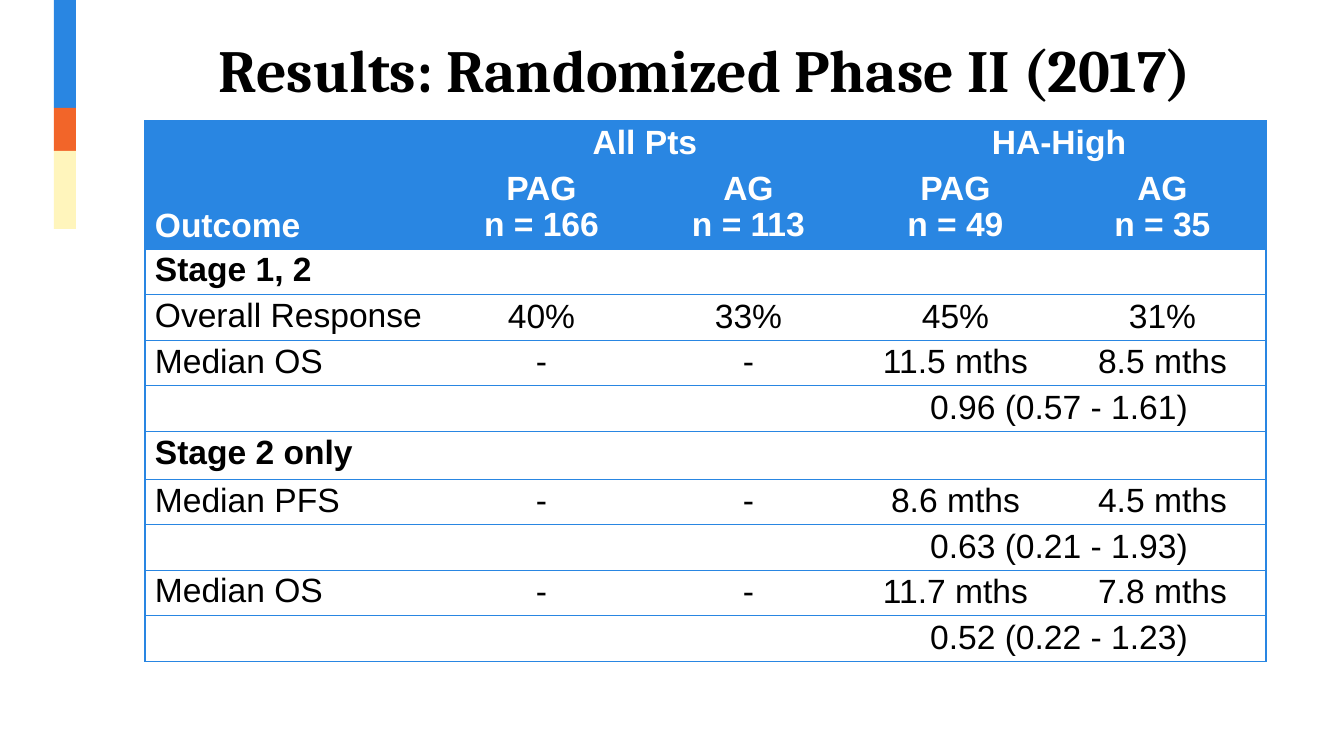
from lxml.etree import SubElement
from pptx import Presentation
from pptx.dml.color import RGBColor
from pptx.enum.shapes import MSO_SHAPE
from pptx.enum.text import MSO_ANCHOR, MSO_AUTO_SIZE, PP_ALIGN
from pptx.oxml.ns import qn
from pptx.util import Pt

BLUE = RGBColor(0x29, 0x86, 0xE2)
ORANGE = RGBColor(0xF2, 0x65, 0x29)
CREAM = RGBColor(0xFF, 0xF5, 0xBC)
WHITE = RGBColor(0xFF, 0xFF, 0xFF)
BLACK = RGBColor(0, 0, 0)
NO_GRID_STYLE = "{2D5ABB26-0587-4C30-8999-92F81FD0307C}"


def px(count):
    return round(count * 914400 / 134.4)


def add_borders(cell, sides):
    properties = cell._tc.get_or_add_tcPr()
    for side in sides:
        line = SubElement(properties, qn(f"a:ln{side}"), w=str(Pt(1)))
        fill = SubElement(line, qn("a:solidFill"))
        SubElement(fill, qn("a:srgbClr"), val=str(BLUE))


deck = Presentation()
deck.slide_width = px(1344)
deck.slide_height = px(756)
page = deck.slides.add_slide(deck.slide_layouts[5])

bar_top = 0
for bar_height, color in [(108, BLUE), (43, ORANGE), (78, CREAM)]:
    bar = page.shapes.add_shape(MSO_SHAPE.RECTANGLE, px(54), px(bar_top), px(22), px(bar_height))
    bar.shadow.inherit = False
    bar.fill.solid()
    bar.fill.fore_color.rgb = color
    bar.line.fill.background()
    bar_top += bar_height

title = page.shapes.title
title.left, title.top, title.width, title.height = px(112), px(20), px(1187), px(91)
title.text_frame.text = "Results: Randomized Phase II (2017)"
title.text_frame.auto_size = MSO_AUTO_SIZE.NONE
title.text_frame.vertical_anchor = MSO_ANCHOR.BOTTOM
heading = title.text_frame.paragraphs[0]
heading.alignment = PP_ALIGN.CENTER
heading.font.name = "Cambria"
heading.font.size = Pt(32)
heading.font.bold = True
heading.font.color.rgb = BLACK

rows = [
    ["Outcome", "All Pts", "", "HA-High", ""],
    ["", "PAG\nn = 166", "AG\nn = 113", "PAG\nn = 49", "AG\nn = 35"],
    ["Stage 1, 2", "", "", "", ""],
    ["Overall Response", "40%", "33%", "45%", "31%"],
    ["Median OS", "-", "-", "11.5 mths", "8.5 mths"],
    ["", "", "", "0.96 (0.57 - 1.61)", ""],
    ["Stage 2 only", "", "", "", ""],
    ["Median PFS", "-", "-", "8.6 mths", "4.5 mths"],
    ["", "", "", "0.63 (0.21 - 1.93)", ""],
    ["Median OS", "-", "-", "11.7 mths", "7.8 mths"],
    ["", "", "", "0.52 (0.22 - 1.23)", ""],
]
row_heights = [45, 83, 45, 46, 45, 46, 48, 45, 46, 45, 46]
column_widths = [293] + [207] * 4
header_rows = 2

frame = page.shapes.add_table(
    len(rows), len(column_widths), px(145), px(121), px(sum(column_widths)), px(sum(row_heights))
)
table = frame.table
table.first_row = False
table.horz_banding = False
table._tbl.tblPr.find(qn("a:tableStyleId")).text = NO_GRID_STYLE
for column, width in zip(table.columns, column_widths):
    column.width = px(width)
for row, height in zip(table.rows, row_heights):
    row.height = px(height)

table.cell(0, 0).merge(table.cell(1, 0))
table.cell(0, 1).merge(table.cell(0, 2))
for row_index in (0, 5, 8, 10):
    table.cell(row_index, 3).merge(table.cell(row_index, 4))

for row_index, texts in enumerate(rows):
    is_header = row_index < header_rows
    for column_index, text in enumerate(texts):
        cell = table.cell(row_index, column_index)
        reaches_right = column_index == 4 or (column_index == 3 and cell.is_merge_origin)
        sides = ("L" if column_index == 0 else "") + ("R" if reaches_right else "")
        add_borders(cell, sides + "TB")
        cell.fill.solid()
        cell.fill.fore_color.rgb = BLUE if is_header else WHITE
        cell.margin_left = cell.margin_right = px(10)
        cell.margin_top = cell.margin_bottom = px(4)
        if column_index > 0:
            cell.vertical_anchor = MSO_ANCHOR.MIDDLE
        else:
            cell.vertical_anchor = MSO_ANCHOR.BOTTOM if is_header else MSO_ANCHOR.TOP
        cell.text = text
        for para in cell.text_frame.paragraphs:
            para.alignment = PP_ALIGN.CENTER if column_index > 0 else PP_ALIGN.LEFT
            para.line_spacing = 0.95
            para.font.name = "Arial"
            para.font.size = Pt(18)
            para.font.bold = is_header or text.startswith("Stage")
            para.font.color.rgb = WHITE if is_header else BLACK

deck.save("out.pptx")
